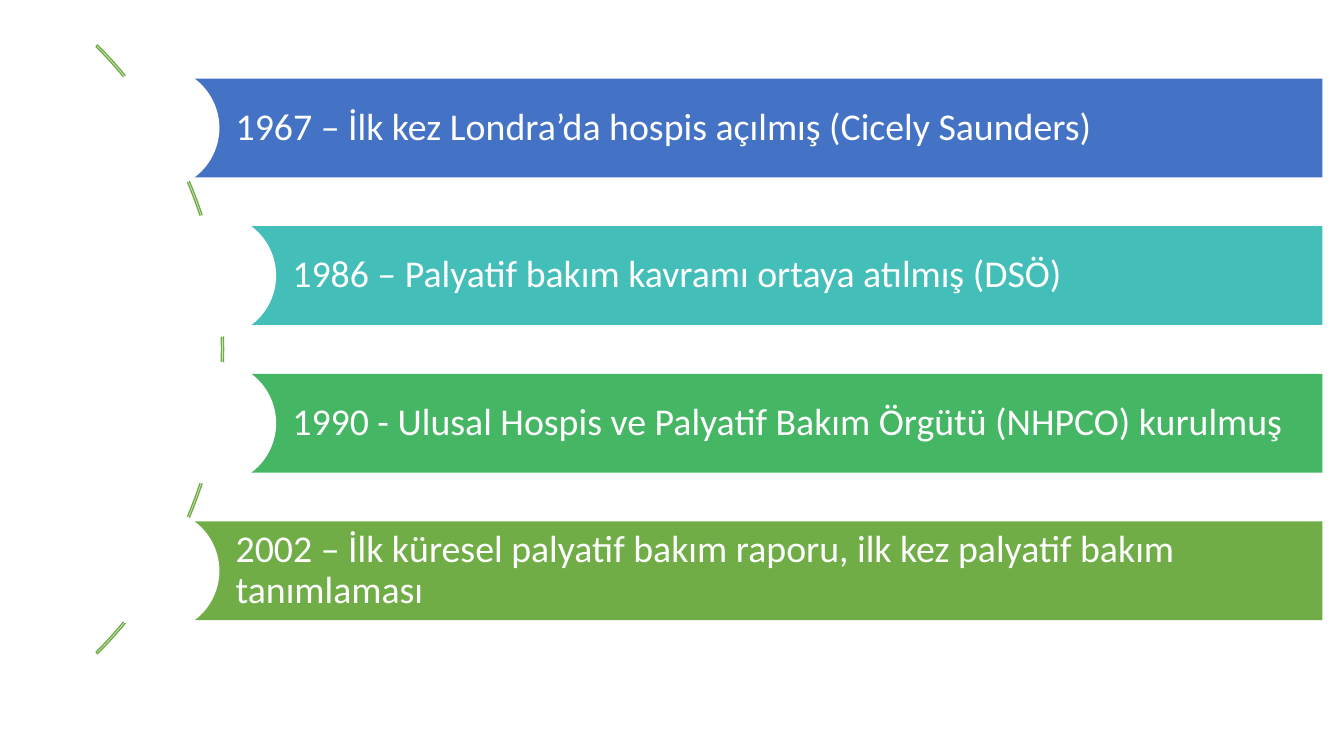
from dataclasses import dataclass

from pptx import Presentation
from pptx import util as u
from pptx.dml.color import RGBColor
from pptx.enum import shapes, text


@dataclass(frozen=True)
class Theme:
    font: str = "Calibri"
    size: float = 27
    paper: str = "FFFFFF"
    arc: str = "70AD47"
    bars: tuple = ("4472C4", "43BEB9", "45B664", "70AD47")


THEME = Theme()
MILESTONES = (
    "1967 – İlk kez Londra’da hospis açılmış (Cicely Saunders)",
    "1986 – Palyatif bakım kavramı ortaya atılmış (DSÖ)",
    "1990 - Ulusal Hospis ve Palyatif Bakım Örgütü (NHPCO) kurulmuş",
    "2002 – İlk küresel palyatif bakım raporu, ilk kez palyatif bakım tanımlaması",
)
BAR_HEIGHT = 2.49
ROW_PITCH = 3.72
INNER_INDENT = 1.43
NODE_SIZE = 3.1
ARC_SIZE = 21.69
ARC_CENTRE_OFFSET = 9.19


def add_plain_shape(slide, kind, left, top, width, height, fill=None):
    """Add a shape without line or shadow; lengths are in centimetres."""
    shape = slide.shapes.add_shape(
        kind, u.Cm(left), u.Cm(top), u.Cm(width), u.Cm(height))
    shape.shadow.inherit = False
    shape.line.fill.background()
    if fill:
        shape.fill.solid()
        shape.fill.fore_color.rgb = RGBColor.from_string(fill)
    else:
        shape.fill.background()
    return shape


def add_arc(slide, centre_x, centre_y):
    arc = add_plain_shape(
        slide, shapes.MSO_SHAPE.BLOCK_ARC, centre_x - ARC_SIZE / 2,
        centre_y - ARC_SIZE / 2, ARC_SIZE, ARC_SIZE)
    # Angles from 315 to 45 degrees, then the band's relative thickness
    for index, value in enumerate((189, 27, 0.0025)):
        arc.adjustments[index] = value
    arc.line.color.rgb = RGBColor.from_string(THEME.arc)
    arc.line.width = u.Pt(1)


def add_milestone(slide, left, top, width, wording, colour):
    """Place a labelled bar with a round node centred on its left edge."""
    bar = add_plain_shape(
        slide, shapes.MSO_SHAPE.RECTANGLE, left, top, width, BAR_HEIGHT, colour)
    frame = bar.text_frame
    frame.word_wrap = True
    frame.vertical_anchor = text.MSO_ANCHOR.MIDDLE
    frame.margin_left = u.Cm(1.96)
    frame.margin_right = frame.margin_top = frame.margin_bottom = u.Cm(0.18)
    paragraph = frame.paragraphs[0]
    paragraph.alignment = text.PP_ALIGN.LEFT
    paragraph.line_spacing = 0.9
    run = paragraph.add_run()
    run.text = wording
    run.font.name = THEME.font
    run.font.size = u.Pt(THEME.size)
    run.font.color.rgb = RGBColor.from_string(THEME.paper)

    add_plain_shape(
        slide, shapes.MSO_SHAPE.OVAL, left - NODE_SIZE / 2,
        top + (BAR_HEIGHT - NODE_SIZE) / 2, NODE_SIZE, NODE_SIZE, THEME.paper)


def add_timeline(slide, left, top, width):
    """Curved list: the inner rows are indented to follow the arc."""
    last = len(MILESTONES) - 1
    add_arc(slide, left - ARC_CENTRE_OFFSET,
            top + (last * ROW_PITCH + BAR_HEIGHT) / 2)
    for row, (wording, colour) in enumerate(zip(MILESTONES, THEME.bars)):
        indent = INNER_INDENT if 0 < row < last else 0
        add_milestone(slide, left + indent, top + row * ROW_PITCH,
                      width - indent, wording, colour)


def main():
    deck = Presentation()
    deck.slide_width, deck.slide_height = u.Cm(33.87), u.Cm(19.05)
    slide = deck.slides.add_slide(deck.slide_layouts[6])
    add_timeline(slide, left=3.98, top=1.98, width=29.35)
    deck.save("out.pptx")


if __name__ == "__main__":
    main()
